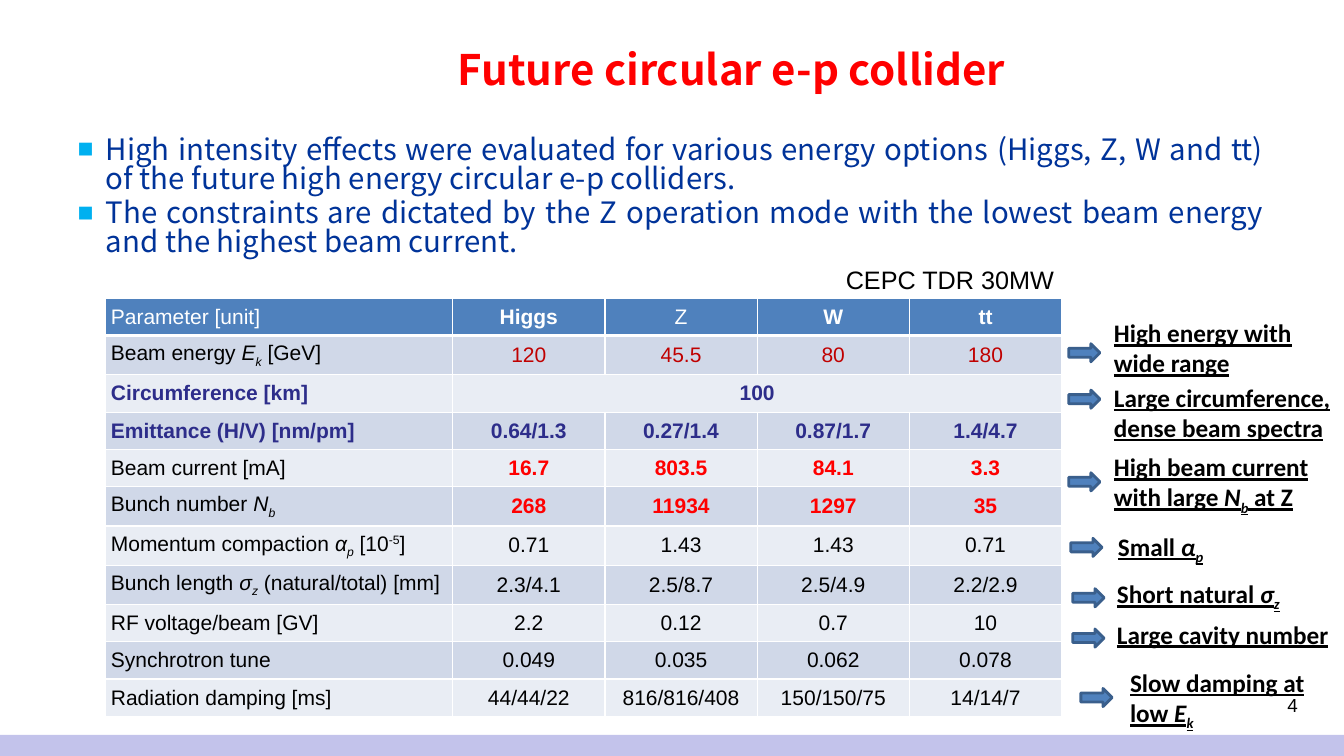
from dataclasses import dataclass
from typing import NamedTuple

from lxml import etree
from pptx import Presentation
from pptx.dml.color import RGBColor
from pptx.enum.shapes import MSO_SHAPE
from pptx.enum.text import MSO_ANCHOR, MSO_AUTO_SIZE, PP_ALIGN
from pptx.oxml.ns import qn
from pptx.util import Inches, Pt

RECT, ARROW = MSO_SHAPE.RECTANGLE, MSO_SHAPE.RIGHT_ARROW
LEFT, CENTER, RIGHT = PP_ALIGN.LEFT, PP_ALIGN.CENTER, PP_ALIGN.RIGHT
JUSTIFY, MIDDLE = PP_ALIGN.JUSTIFY, MSO_ANCHOR.MIDDLE
NO_FIT = MSO_AUTO_SIZE.NONE

BLACK, WHITE, RED, CRIMSON = "000000", "FFFFFF", "FF0000", "C00000"
NAVY, INDIGO, SKY, LILAC = "003399", "2D2D8A", "00B0F0", "C3C3EB"
STEEL, STEEL_DARK = "4F81BD", "3A5F8C"
BANDS = ("E9EDF4", "D0D8E8")
HEAD_FONT = "Noto Sans CJK SC"


class Run(NamedTuple):
    text: str
    italic: bool = False
    baseline: int = 0


def symbol(letter: str, index: str) -> list[Run]:
    return [Run(letter, True), Run(index, True, -25)]


@dataclass
class Row:
    label: list[Run]
    values: list[str]
    label_color: str = BLACK
    value_color: str = BLACK
    label_bold: bool = False
    value_bold: bool = False


@dataclass
class Callout:
    runs: list[Run]
    box: tuple[float, float, float, float]
    arrow: tuple[float, float]


ROWS = [
    Row([Run("Parameter [unit]")], ["Higgs", "Z", "W", "tt"], WHITE, WHITE, False, True),
    Row([Run("Beam energy "), *symbol("E", "k"), Run(" [GeV]")],
        ["120", "45.5", "80", "180"], value_color=CRIMSON),
    Row([Run("Circumference [km]")], ["100"], INDIGO, INDIGO, True, True),
    Row([Run("Emittance (H/V) [nm/pm]")], ["0.64/1.3", "0.27/1.4", "0.87/1.7", "1.4/4.7"],
        INDIGO, INDIGO, True, True),
    Row([Run("Beam current [mA]")], ["16.7", "803.5", "84.1", "3.3"],
        value_color=RED, value_bold=True),
    Row([Run("Bunch number "), *symbol("N", "b")], ["268", "11934", "1297", "35"],
        value_color=RED, value_bold=True),
    Row([Run("Momentum compaction "), *symbol("α", "p"), Run(" [10"), Run("-5", False, 30),
         Run("]")], ["0.71", "1.43", "1.43", "0.71"]),
    Row([Run("Bunch length "), *symbol("σ", "z"), Run(" (natural/total) [mm]")],
        ["2.3/4.1", "2.5/8.7", "2.5/4.9", "2.2/2.9"]),
    Row([Run("RF voltage/beam [GV]")], ["2.2", "0.12", "0.7", "10"]),
    Row([Run("Synchrotron tune")], ["0.049", "0.035", "0.062", "0.078"]),
    Row([Run("Radiation damping [ms]")], ["44/44/22", "816/816/408", "150/150/75", "14/14/7"]),
]

CALLOUTS = [
    Callout([Run("High energy with wide range")], (10.95, 3.1, 2.35, 0.71), (10.6, 3.41)),
    Callout([Run("Large circumference, dense beam spectra")],
            (10.95, 3.74, 2.35, 0.71), (10.6, 3.87)),
    Callout([Run("High beam current with large "), *symbol("N", "b"), Run(" at Z")],
            (10.95, 4.43, 2.23, 0.71), (10.6, 4.69)),
    Callout([Run("Small "), *symbol("α", "p")], (10.99, 5.22, 1.84, 0.4), (10.62, 5.34)),
    Callout([Run("Short natural "), *symbol("σ", "z")], (10.98, 5.69, 1.92, 0.4), (10.64, 5.84)),
    Callout([Run("Large cavity number")], (10.98, 6.09, 2.35, 0.4), (10.64, 6.24)),
    Callout([Run("Slow damping at low "), *symbol("E", "k")],
            (11.11, 6.57, 1.96, 0.71), (10.72, 6.83)),
]

BULLETS = [
    "High intensity effects were evaluated for various energy options (Higgs, Z, W and tt) "
    "of the future high energy circular e-p colliders.",
    "The constraints are dictated by the Z operation mode with the lowest beam energy "
    "and the highest beam current.",
]


def rgb(color: str) -> RGBColor:
    return RGBColor.from_string(color)


def style(font, name: str, size: float, color: str, bold=False, underline=False) -> None:
    font.name, font.size, font.bold, font.underline = name, Pt(size), bold, underline
    font.color.rgb = rgb(color)


def write(p, runs: list[Run], name: str, size: float, color: str, bold=False,
          underline=False, align=LEFT) -> None:
    p.alignment = align
    for run in runs:
        r = p.add_run()
        r.text = run.text
        style(r.font, name, size, color, bold, underline)
        r.font.italic = run.italic
        if run.baseline:
            r.font._element.set("baseline", str(run.baseline * 1000))


def place(sp, left: float, top: float, width: float, height: float) -> None:
    sp.left, sp.top, sp.width, sp.height = map(Inches, (left, top, width, height))


def add_text(slide, box: tuple[float, float, float, float], runs: list[Run], name: str,
             size: float, **look) -> None:
    tf = slide.shapes.add_textbox(*map(Inches, box)).text_frame
    tf.word_wrap = True
    write(tf.paragraphs[0], runs, name, size, BLACK, **look)


def add_block(slide, kind, box: tuple[float, float, float, float], fill: str, line="") -> None:
    sp = slide.shapes.add_shape(kind, *map(Inches, box))
    sp.shadow.inherit = False
    sp.fill.solid()
    sp.fill.fore_color.rgb = rgb(fill)
    if line:
        sp.line.color.rgb, sp.line.width = rgb(line), Pt(2)
    else:
        sp.line.fill.background()


def add_bullet(p) -> None:
    pPr = p._p.get_or_add_pPr()
    pPr.set("marL", str(Inches(0.28)))
    pPr.set("indent", str(-Inches(0.28)))
    color = etree.SubElement(pPr, qn("a:buClr"))
    etree.SubElement(color, qn("a:srgbClr"), val=SKY)
    etree.SubElement(pPr, qn("a:buSzPct"), val="90000")
    etree.SubElement(pPr, qn("a:buFont"), typeface="Arial")
    etree.SubElement(pPr, qn("a:buChar"), char="■")


def format_cell(cell, row: int) -> None:
    tcPr = cell._tc.get_or_add_tcPr()
    heavy = {0: "lnB", 1: "lnT"}.get(row)
    for side in ("lnL", "lnR", "lnT", "lnB"):
        ln = etree.SubElement(tcPr, qn(f"a:{side}"), w=str(Pt(3 if side == heavy else 1)))
        etree.SubElement(etree.SubElement(ln, qn("a:solidFill")), qn("a:srgbClr"), val=WHITE)
    cell.fill.solid()
    cell.fill.fore_color.rgb = rgb(BANDS[row % 2] if row else STEEL)
    cell.margin_left = cell.margin_right = Inches(0.05)
    cell.margin_top = cell.margin_bottom = Inches(0.04)
    cell.vertical_anchor = MIDDLE


def add_parameters(slide) -> None:
    heights = [0.39 if any(r.baseline for r in row.label) else 0.37 for row in ROWS]
    table = slide.shapes.add_table(len(ROWS), 5, Inches(1.05), Inches(2.96), Inches(9.48),
                                   Inches(sum(heights))).table
    table.first_row = table.horz_banding = False
    for col, width in zip(table.columns, [3.44] + [1.51] * 4):
        col.width = Inches(width)
    for i, row in enumerate(ROWS):
        table.rows[i].height = Inches(heights[i])
        for j in range(5):
            format_cell(table.cell(i, j), i)
        write(table.cell(i, 0).text_frame.paragraphs[0], row.label, "Arial", 15,
              row.label_color, row.label_bold)
        if len(row.values) == 1:
            table.cell(i, 1).merge(table.cell(i, 4))
        for j, value in enumerate(row.values, 1):
            bold = row.value_bold and value != "Z"
            write(table.cell(i, j).text_frame.paragraphs[0], [Run(value)], "Arial", 15,
                  row.value_color, bold, align=CENTER)


def main() -> None:
    prs = Presentation()
    prs.slide_width, prs.slide_height = Inches(13.33), Inches(7.5)
    slide = prs.slides.add_slide(prs.slide_layouts[1])
    title, body = slide.placeholders

    # Footer band and page number
    add_block(slide, RECT, (0, 7.29, 13.33, 0.21), LILAC)
    add_text(slide, (9.27, 6.83, 3.7, 0.33), [Run("4")], "Arial", 13.5, align=RIGHT)

    # Title
    place(title, 2.05, 0.06, 10.41, 1.25)
    tf = title.text_frame
    tf.auto_size, tf.vertical_anchor = NO_FIT, MIDDLE
    write(tf.paragraphs[0], [Run("Future circular e-p collider")], HEAD_FONT, 30, RED,
          bold=True, align=CENTER)

    # Bullet list
    place(body, 0.67, 1.31, 11.96, 5.39)
    tf = body.text_frame
    tf.text = "\n".join(BULLETS)
    tf.auto_size = NO_FIT
    for i, p in enumerate(tf.paragraphs):
        p.alignment, p.line_spacing = JUSTIFY, 0.82
        p.space_before = Pt(4.2 if i else 0)
        add_bullet(p)
        style(p.runs[0].font, HEAD_FONT, 21, NAVY)

    # Parameter table
    add_parameters(slide)
    add_text(slide, (8.29, 2.57, 2.45, 0.4), [Run("CEPC TDR 30MW")], "Arial", 18)

    # Callouts beside the table
    for c in CALLOUTS:
        add_text(slide, c.box, c.runs, "Calibri", 18, bold=True, underline=True)
        add_block(slide, ARROW, (*c.arrow, 0.31, 0.18), STEEL, STEEL_DARK)

    prs.save("out.pptx")


if __name__ == "__main__":
    main()
